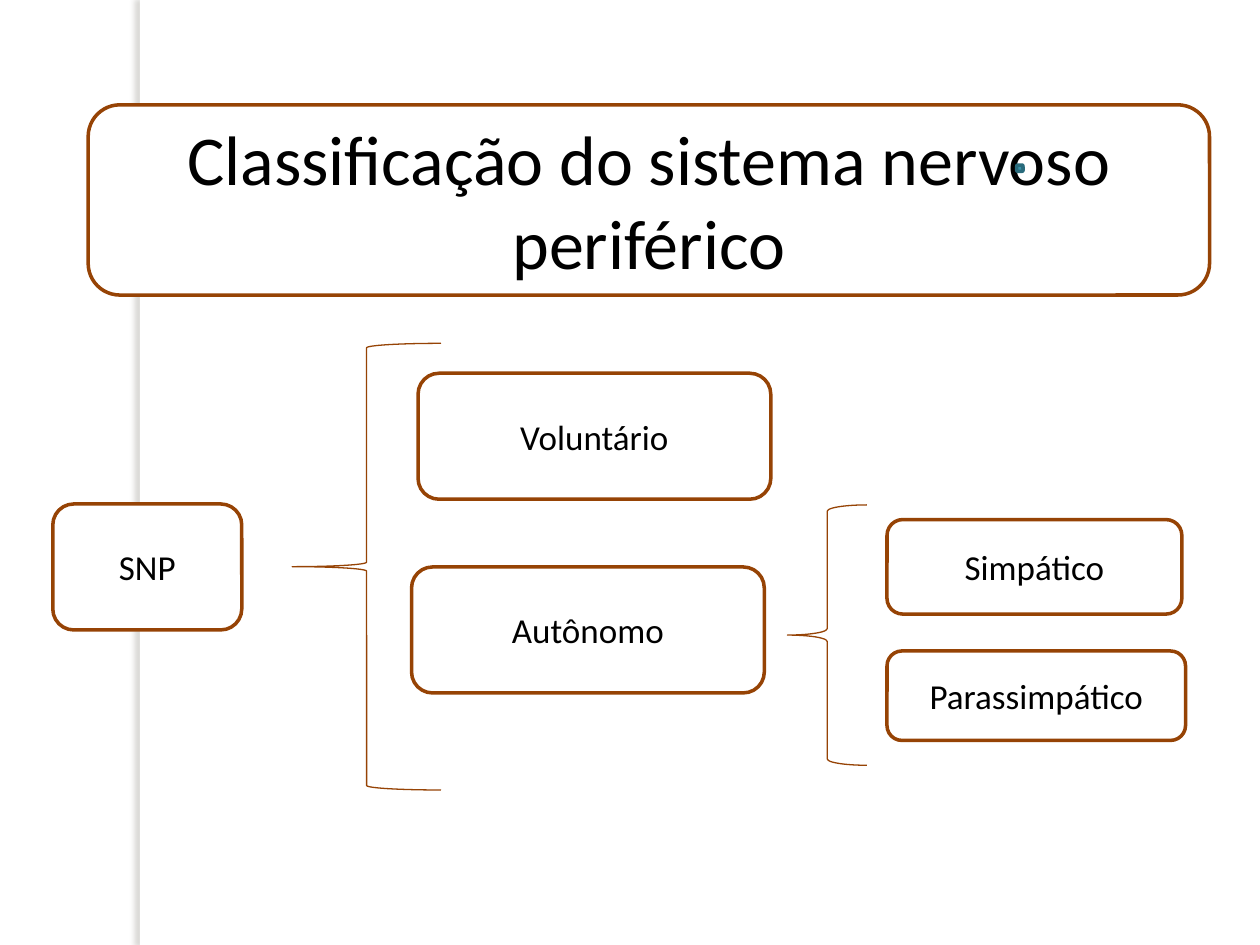
"""Builds a slide classifying the peripheral nervous system as a bracketed tree."""
from lxml.etree import SubElement
from pptx import Presentation
from pptx.dml.color import RGBColor
from pptx.enum.shapes import MSO_SHAPE as Shape
from pptx.enum.text import MSO_ANCHOR as Anchor, PP_ALIGN as Align
from pptx.oxml.ns import qn
from pptx.util import Pt

WHITE, BLACK, BROWN = "FFFFFF", "000000", "964305"
SLIDE_SIZE = (720, 540)
SIDE_STRIP = (79.92, 0, 5.76, 540)
DOT = (581, 94.3, 3.6, 3.6)
TOPICS = [
    ("Classificação do sistema nervoso periférico", 40, (50.4, 59.9, 640.8, 108.7)),
    ("SNP", 20, (30.2, 288, 108, 72)),
    ("Voluntário", 20, (238.9, 213.3, 201.6, 72)),
    ("Autônomo", 20, (235.2, 324, 201.6, 72)),
    ("Simpático", 20, (506.9, 296.9, 168.5, 54)),
    ("Parassimpático", 20, (506.9, 372, 170.6, 51.1)),
]
BRACES = [
    ((167, 196.2, 85, 255.2), 0.03),
    ((450, 288.5, 45.4, 148.8), 0.08),
]


def color(value):
    return RGBColor.from_string(value)


def add_part(slide, preset, box, fill=None, line=None, width=2):
    part = slide.shapes.add_shape(preset, *map(Pt, box))
    part.shadow.inherit = False
    if fill:
        part.fill.solid()
        part.fill.fore_color.rgb = color(fill)
    else:
        part.fill.background()
    if line:
        part.line.color.rgb = color(line)
        part.line.width = Pt(width)
    else:
        part.line.fill.background()
    return part


def cast_shadow(part, shade, opacity, blur, distance, angle):
    effects = part._element.spPr.find(qn("a:effectLst"))
    shadow = SubElement(effects, qn("a:outerShdw"), blurRad=str(Pt(blur)),
                        dist=str(Pt(distance)), dir=str(angle * 60000),
                        algn="tl", rotWithShape="0")
    tint = SubElement(shadow, qn("a:srgbClr"), val=shade)
    SubElement(tint, qn("a:alpha"), val=str(opacity * 1000))


def add_topic(slide, label, size, box):
    frame = add_part(slide, Shape.ROUNDED_RECTANGLE, box, WHITE, BROWN).text_frame
    frame.word_wrap = True
    frame.vertical_anchor = Anchor.MIDDLE
    paragraph = frame.paragraphs[0]
    paragraph.text = label
    paragraph.alignment = Align.CENTER
    paragraph.font.name = "Calibri"
    paragraph.font.size = Pt(size)
    paragraph.font.color.rgb = color(BLACK)


def main():
    deck = Presentation()
    deck.slide_width, deck.slide_height = map(Pt, SLIDE_SIZE)
    slide = deck.slides.add_slide(deck.slide_layouts[6])
    strip = add_part(slide, Shape.RECTANGLE, SIDE_STRIP, WHITE)
    cast_shadow(strip, "736F63", 25, 3, 3, 180)
    for label, size, box in TOPICS:
        add_topic(slide, label, size, box)
    add_part(slide, Shape.ROUNDED_RECTANGLE, DOT, "3891A7", "296B7C")
    for box, curve in BRACES:
        brace = add_part(slide, Shape.LEFT_BRACE, box, line=BROWN, width=0.75)
        brace.adjustments[0] = curve
    deck.save("out.pptx")


if __name__ == "__main__":
    main()
